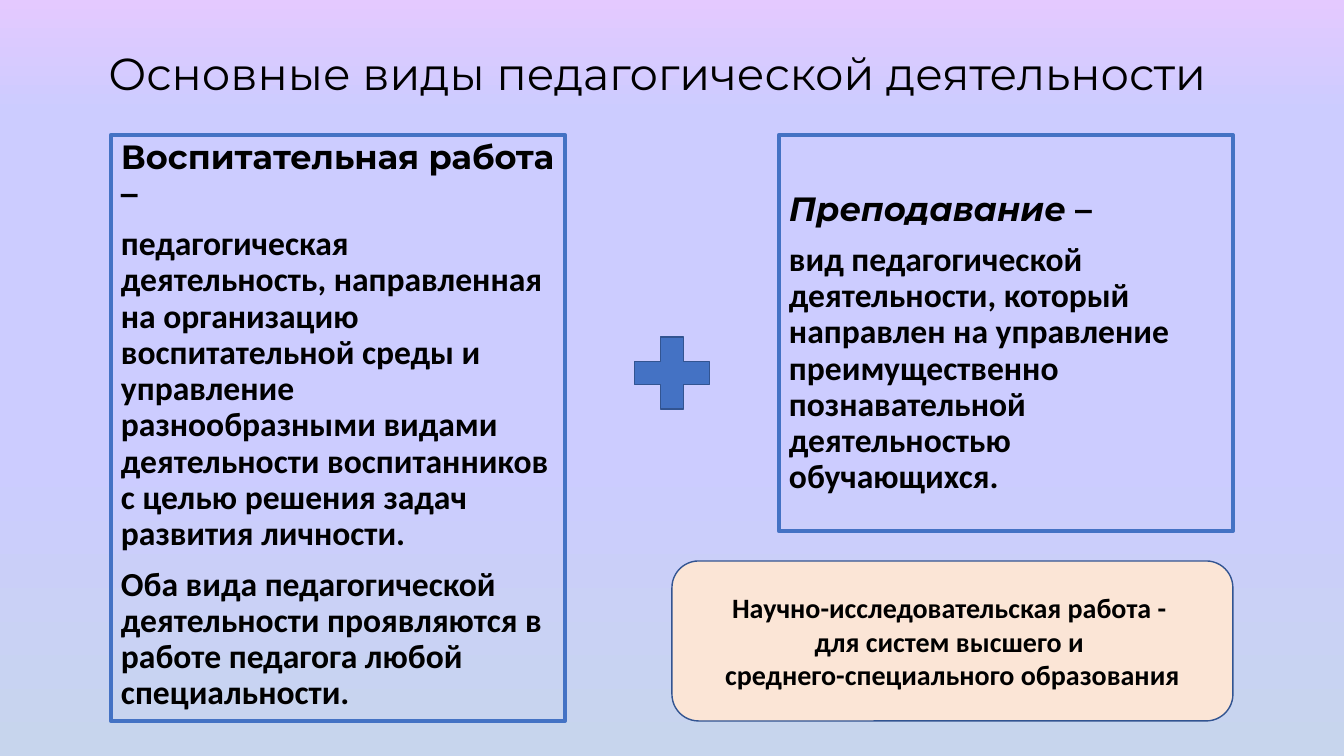
"""Build the slide on the main kinds of teaching activity."""
from lxml.etree import SubElement
from pptx import Presentation
from pptx.dml.color import RGBColor
from pptx.enum.shapes import MSO_SHAPE
from pptx.enum.text import MSO_ANCHOR, PP_ALIGN
from pptx.oxml.ns import qn
from pptx.util import Pt

COLORS = {"black": "000000", "blue": "4472C4", "edge": "325491", "peach": "FBE5D6"}
GRADIENT = [(0, "E4C9FF"), (15, "CCCCFF"), (35, "CCCCFF"), (60, "CCCCFF"), (100, "C7D5ED")]

TITLE = {"size": Pt(32), "name": "Montserrat", "bold": False}
HEAD = {"size": Pt(24), "name": "Montserrat", "bold": True}
HEAD_ITALIC = HEAD | {"italic": True}
BODY = {"size": Pt(24), "name": "Calibri", "bold": True}
NOTE = BODY | {"size": Pt(20)}

TITLE_TEXT = [[("Основные виды педагогической деятельности ", TITLE)]]
UPBRINGING = [
    [("Воспитательная работа –", HEAD)],
    [("педагогическая деятельность, направленная на организацию воспитательной среды "
      "и управление разнообразными видами деятельности воспитанников с целью решения "
      "задач развития личности.", BODY)],
    [("Оба вида педагогической деятельности проявляются в работе педагога любой "
      "специальности.", BODY)],
]
TEACHING = [
    [("Преподавание ", HEAD_ITALIC), ("–", HEAD)],
    [("вид педагогической деятельности, который направлен на управление преимущественно "
      "познавательной деятельностью обучающихся.", BODY)],
]
RESEARCH = [
    [("Научно-исследовательская работа - ", NOTE)],
    [("для систем высшего и ", NOTE)],
    [("среднего-специального образования", NOTE)],
]

PX = 12192000 / 1344
WIDTH, HEIGHT = 1344, 756
LEFT, RIGHT, TOP, BOTTOM = 111, 1233, 135, 721
BOX_W, TEACHING_H = 454, 396
NOTE_W, NOTE_H = 561, 160
PLUS_W, PLUS_H = 102, 98

CENTERED = {"alignment": PP_ALIGN.CENTER}
LISTED = {"alignment": PP_ALIGN.LEFT, "line_spacing": 0.9}


def px(n):
    return round(n * PX)


def rgb(name):
    return RGBColor.from_string(COLORS[name])


def apply(target, values):
    for key, value in values.items():
        setattr(target, key, value)


def write(sp, paragraphs, layout, anchor, gap=0, top=5):
    tf = sp.text_frame
    apply(tf, {"word_wrap": True, "vertical_anchor": anchor, "margin_top": px(top),
               "margin_bottom": px(5), "margin_left": px(10), "margin_right": px(10)})
    for i, runs in enumerate(paragraphs):
        p = tf.add_paragraph() if i else tf.paragraphs[0]
        apply(p, layout | {"space_before": Pt(gap if i else 0)})
        for text, font in runs:
            r = p.add_run()
            r.text = text
            apply(r.font, font)
            r.font.color.rgb = rgb("black")


def add_shape(s, kind, box, fill, line, width):
    sp = s.shapes.add_shape(kind, *map(px, box))
    sp.shadow.inherit = False
    if fill:
        sp.fill.solid()
        sp.fill.fore_color.rgb = rgb(fill)
    else:
        sp.fill.background()
    sp.line.color.rgb = rgb(line)
    sp.line.width = Pt(width)
    return sp


def paint_background(s):
    fill = s.background.fill
    fill.gradient()
    fill.gradient_angle = 270
    stops = s.element.find(".//" + qn("a:gsLst"))
    for stop in list(stops):
        stops.remove(stop)
    for percent, color in GRADIENT:
        stop = SubElement(stops, qn("a:gs"), pos=str(percent * 1000))
        SubElement(stop, qn("a:srgbClr"), val=color)


def main():
    prs = Presentation()
    prs.slide_width, prs.slide_height = px(WIDTH), px(HEIGHT)
    s = prs.slides.add_slide(prs.slide_layouts[6])
    paint_background(s)

    title = s.shapes.add_textbox(*map(px, (39, 18, 1249, 117)))
    write(title, TITLE_TEXT, CENTERED | {"line_spacing": 0.9}, MSO_ANCHOR.MIDDLE)

    columns = [(LEFT, BOTTOM - TOP, UPBRINGING, 5),
               (RIGHT - BOX_W, TEACHING_H, TEACHING, 57)]
    for x, h, paragraphs, inset in columns:
        sp = add_shape(s, MSO_SHAPE.RECTANGLE, (x, TOP, BOX_W, h), None, "blue", 3)
        write(sp, paragraphs, LISTED, MSO_ANCHOR.TOP, gap=10, top=inset)

    middle = (LEFT + RIGHT) / 2
    add_shape(s, MSO_SHAPE.MATH_PLUS, (middle - PLUS_W / 2, 324, PLUS_W, PLUS_H),
              "blue", "edge", 1)

    note = add_shape(s, MSO_SHAPE.ROUNDED_RECTANGLE,
                     (RIGHT - NOTE_W, BOTTOM - NOTE_H, NOTE_W, NOTE_H), "peach", "edge", 1)
    write(note, RESEARCH, CENTERED, MSO_ANCHOR.MIDDLE)

    prs.save("out.pptx")


if __name__ == "__main__":
    main()
